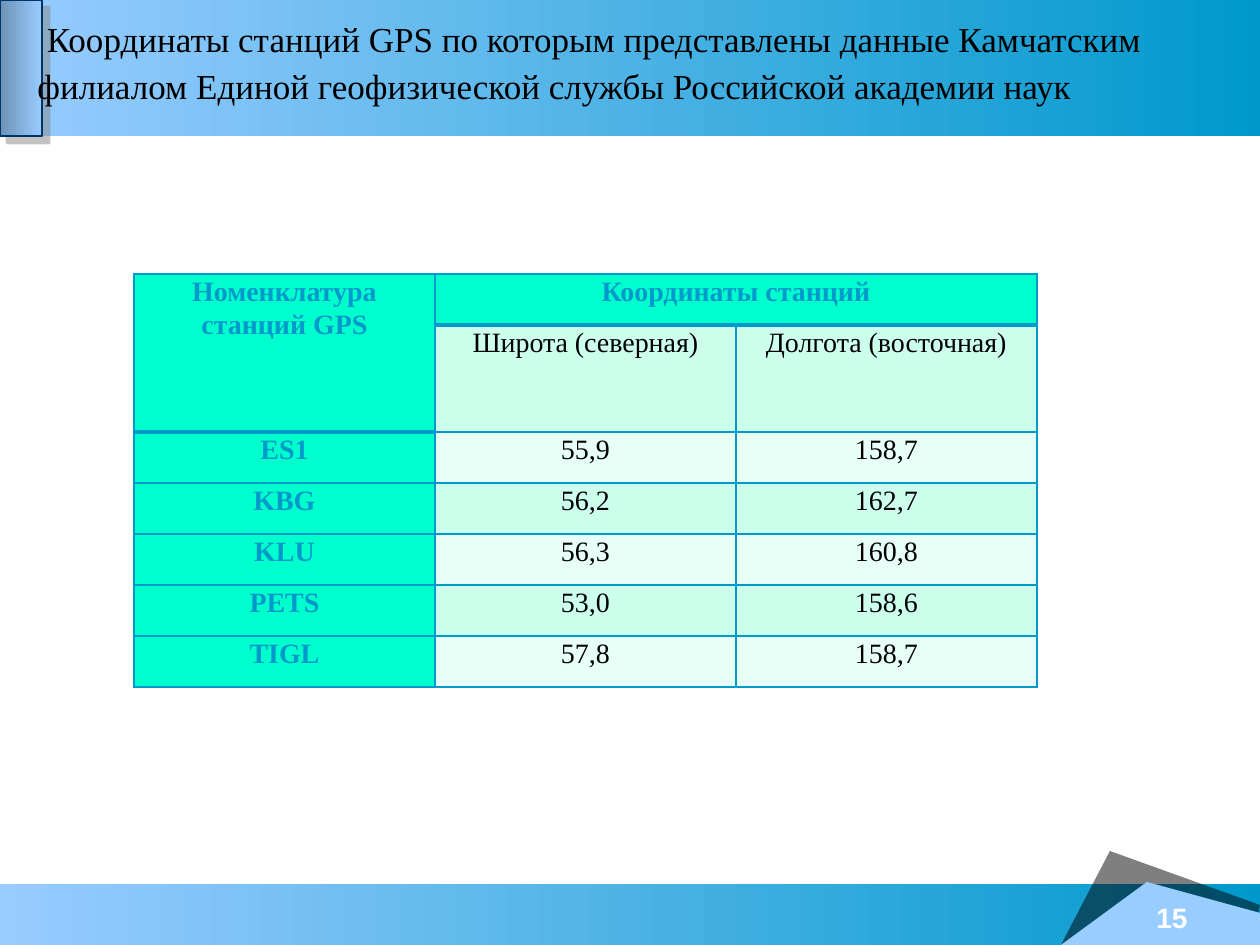
from lxml.etree import SubElement
from pptx import Presentation
from pptx.dml.color import RGBColor as RGB
from pptx.enum.shapes import MSO_SHAPE as SHAPE
from pptx.enum.text import MSO_ANCHOR as ANCHOR, PP_ALIGN as ALIGN
from pptx.oxml import parse_xml
from pptx.oxml.ns import nsdecls, qn
from pptx.util import Emu, Pt

SCALE = 914400 / 126
HEX = {"sky": "99CCFF", "blue": "0099CC", "steel": "6D92B6", "navy": "003366",
       "mint": "00FFCC", "pale": "CCFFEC", "ice": "E7FFF6", "shade": "868686",
       "black": "000000", "white": "FFFFFF"}
SERIF = "Times New Roman"
ROWS = [
    ("Номенклатура станций GPS", "Координаты станций", ""),
    ("", "Широта (северная)", "Долгота (восточная)"),
    ("ES1", "55,9", "158,7"),
    ("KBG", "56,2", "162,7"),
    ("KLU", "56,3", "160,8"),
    ("PETS", "53,0", "158,6"),
    ("TIGL", "57,8", "158,7"),
]
THICK = {(0, 0), (1, 0), (0, 1), (0, 2)}


def px(n):
    return Emu(round(n * SCALE))


def write(par, text, size=16, font=SERIF, color="black", bold=False, align=None, space=None):
    run = par.add_run()
    run.text = text
    run.font.size, run.font.name, run.font.bold = Pt(size), font, bold
    run.font.color.rgb = RGB.from_string(HEX[color])
    if align is not None:
        par.alignment = align
    if space:
        par.line_spacing = space


class Deck:
    """Holds the style and the current slide, and draws each kind of element."""

    def __init__(self):
        self.prs = Presentation()
        self.prs.slide_width, self.prs.slide_height = px(1260), px(945)
        self.slide = self.prs.slides.add_slide(self.prs.slide_layouts[6])
        self.shapes = self.slide.shapes

    def band(self, x, y, w, h, start, end, edge=None):
        box = self.shapes.add_shape(SHAPE.RECTANGLE, *map(px, (x, y, w, h)))
        box.shadow.inherit = False
        box.fill.gradient()
        box.fill.gradient_angle = 0
        for stop, color, at in zip(box.fill.gradient_stops, (start, end), (0, 1)):
            stop.color.rgb = RGB.from_string(HEX[color])
            stop.position = at
        if edge:
            box.line.color.rgb = RGB.from_string(HEX[edge])
            box.line.width = Pt(1.5)
        else:
            box.line.fill.background()
        return box

    def shadow(self, box, color):
        effect = box._element.spPr.find(qn("a:effectLst"))
        effect.append(parse_xml(
            f'<a:outerShdw {nsdecls("a")} blurRad="0" dist="{Pt(5.7)}" dir="2700000" '
            f'algn="ctr" rotWithShape="0"><a:srgbClr val="{HEX[color]}">'
            '<a:alpha val="50000"/></a:srgbClr></a:outerShdw>'))

    def facet(self, points, color, alpha=None):
        pen = self.shapes.build_freeform(*points[0], scale=SCALE)
        pen.add_line_segments(points[1:], close=True)
        form = pen.convert_to_shape()
        form.shadow.inherit = False
        form.fill.solid()
        form.fill.fore_color.rgb = RGB.from_string(HEX[color])
        form.line.fill.background()
        if alpha:
            tint = form._element.spPr.find(qn("a:solidFill"))[0]
            SubElement(tint, qn("a:alpha")).set("val", str(alpha * 1000))

    def label(self, x, y, w, h, wrap=True, anchor=ANCHOR.TOP):
        frame = self.shapes.add_textbox(*map(px, (x, y, w, h))).text_frame
        frame.word_wrap, frame.vertical_anchor = wrap, anchor
        return frame.paragraphs[0]

    def edges(self, cell, row, col):
        props = cell._tc.get_or_add_tcPr()
        above = (row - 1, col) in THICK
        below = (row, col) in THICK
        for i, (side, wide) in enumerate(zip("LRTB", (False, False, above, below))):
            props.insert(i, parse_xml(
                f'<a:ln{side} {nsdecls("a")} w="{Pt(3 if wide else 1)}"><a:solidFill>'
                f'<a:srgbClr val="{HEX["blue"]}"/></a:solidFill></a:ln{side}>'))

    def table(self, x, y, rows, wide, high):
        grid = self.shapes.add_table(len(rows), len(rows[0]), px(x), px(y),
                                     px(wide * len(rows[0])), px(sum(high))).table
        for col in grid.columns:
            col.width = px(wide)
        for r, row in enumerate(rows):
            grid.rows[r].height = px(high[r])
            for c, text in enumerate(row):
                cell = grid.cell(r, c)
                head = r == 0 or c == 0
                fill = "mint" if head else "pale" if r % 2 else "ice"
                cell.fill.solid()
                cell.fill.fore_color.rgb = RGB.from_string(HEX[fill])
                cell.margin_left = cell.margin_right = px(9)
                cell.margin_top = cell.margin_bottom = 0
                self.edges(cell, r, c)
                if text:
                    write(cell.text_frame.paragraphs[0], text, bold=head, space=1.07,
                          color="blue" if head else "black", align=ALIGN.CENTER)
        grid.cell(0, 0).merge(grid.cell(1, 0))
        grid.cell(0, 1).merge(grid.cell(0, 2))


def main():
    deck = Deck()
    deck.band(0, 884, 1260, 61, "sky", "blue")
    deck.facet([(1110, 851), (1260, 905), (1252, 945), (1061, 945)], "black", alpha=50)
    deck.facet([(1061, 945), (1147, 882), (1260, 913), (1260, 945)], "sky")
    deck.band(0, 0, 1260, 136, "sky", "blue")
    tab = deck.band(0, 0, 42, 136, "steel", "sky", edge="navy")
    deck.shadow(tab, "shade")

    page = deck.label(1105, 892, 134, 50, wrap=False, anchor=ANCHOR.MIDDLE)
    write(page, "15", font="Arial", color="white", bold=True, align=ALIGN.CENTER)

    title = deck.label(25, 1, 1235, 110)
    title.space_after = Pt(8)
    write(title, " ", size=24, font="Calibri")
    write(title, "Координаты станций GPS по которым представлены данные Камчатским "
          "филиалом Единой геофизической службы Российской академии наук",
          size=20, space=1.07)

    deck.table(134, 274, ROWS, 301, [51, 107] + [51] * 5)
    deck.prs.save("out.pptx")


if __name__ == "__main__":
    main()
